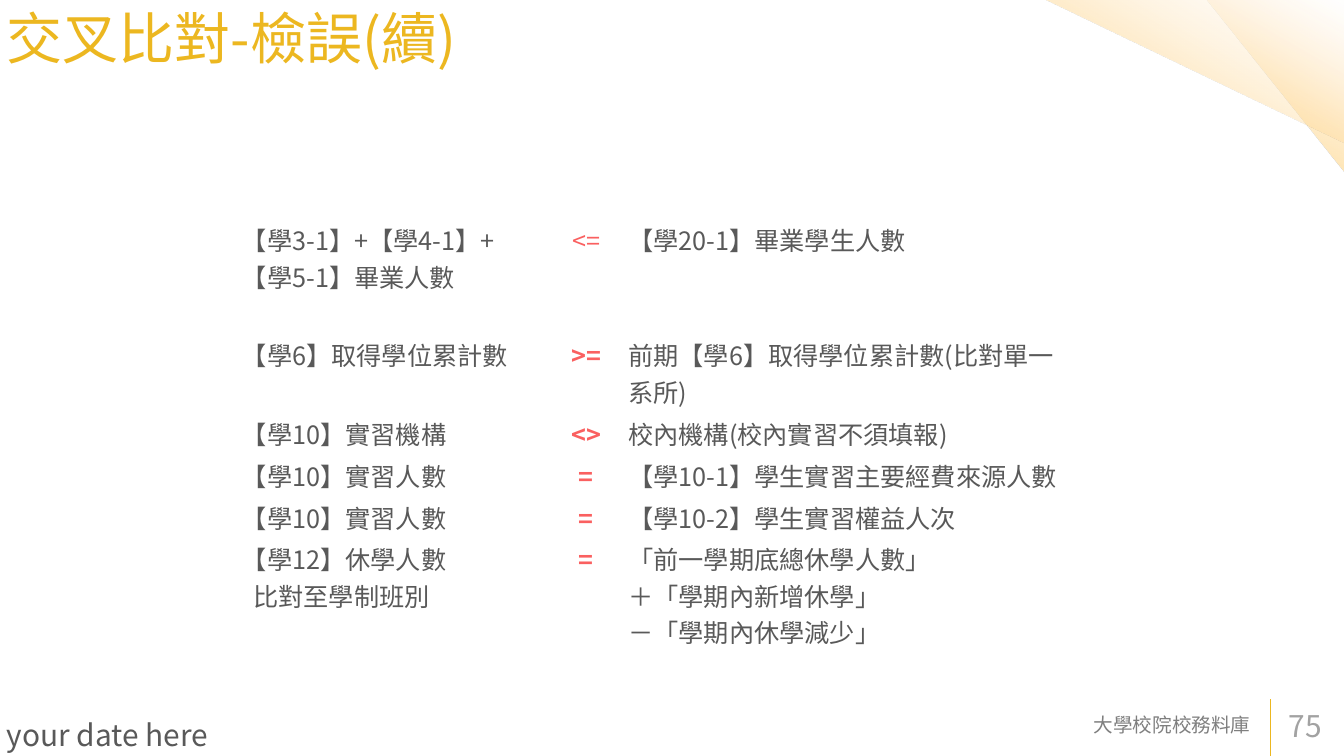
from lxml.etree import SubElement
from pptx import Presentation
from pptx.dml.color import RGBColor
from pptx.enum.shapes import MSO_CONNECTOR, MSO_SHAPE
from pptx.enum.text import MSO_ANCHOR as Anchor, MSO_AUTO_SIZE as AutoSize, PP_ALIGN as Align
from pptx.oxml.ns import qn
from pptx.util import Inches, Pt

FONT = "Noto Sans CJK TC"
GOLD = RGBColor(0xEC, 0xB7, 0x20)
INK = RGBColor(0x59, 0x59, 0x59)
RED = RGBColor(0xFA, 0x60, 0x60)
FOOTER_GREY = RGBColor(0x7F, 0x7F, 0x7F)
NUMBER_GREY = RGBColor(0xA2, 0xA2, 0xA2)

# Gradient stops: position %, colour, opacity %
GLOW = [(0, "FFD984", 100), (50, "FFD995", 43), (100, "FFF0DA", 0)]
GLOW_ANGLE = 120

# Left side, operator, right side, operator in bold, row height
CHECKS = [
    ("【學3-1】+【學4-1】+【學5-1】畢業人數", "<=", "【學20-1】畢業學生人數", False, 0.98),
    ("【學6】取得學位累計數", ">=", "前期【學6】取得學位累計數(比對單一系所)", True, 0.98),
    ("【學10】實習機構", "<>", "校內機構(校內實習不須填報)", True, 0.52),
    ("【學10】實習人數", "=", "【學10-1】學生實習主要經費來源人數", True, 0.52),
    ("【學10】實習人數", "=", "【學10-2】學生實習權益人次", True, 0.52),
    ("【學12】休學人數\n比對至學制班別", "=",
     "「前一學期底總休學人數」\n＋「學期內新增休學」\n－「學期內休學減少」", True, 1.43),
]
COLUMNS = [4.64, 1.11, 6.79]


def write(frame, text, size=27, color=INK, bold=False, align=Align.LEFT):
    """Fill a text frame, one paragraph per line of text."""
    for i, line in enumerate(text.split("\n")):
        paragraph = frame.paragraphs[0] if i == 0 else frame.add_paragraph()
        paragraph.alignment = align
        run = paragraph.add_run()
        run.text = line
        font = run.font
        font.size, font.bold, font.name = Pt(size), bold, FONT
        font.color.rgb = color
        SubElement(font._element, qn("a:ea")).set("typeface", FONT)


def set_insets(target, x, y):
    target.margin_left = target.margin_right = Inches(x)
    target.margin_top = target.margin_bottom = Inches(y)


class SlideBuilder:
    def __init__(self, slide):
        self.slide = slide
        self.shapes = slide.shapes

    def title(self, text, left, top, width, height):
        title = self.shapes.title
        title.left, title.top = Inches(left), Inches(top)
        title.width, title.height = Inches(width), Inches(height)
        frame = title.text_frame
        frame.word_wrap, frame.auto_size = True, AutoSize.NONE
        frame.vertical_anchor = Anchor.TOP
        set_insets(frame, 0.1, 0.05)
        write(frame, text, size=60, color=GOLD)

    def label(self, text, left, top, width, height, insets=(0.18, 0.09),
              anchor=Anchor.MIDDLE, **style):
        box = self.shapes.add_textbox(*map(Inches, (left, top, width, height)))
        frame = box.text_frame
        frame.word_wrap = True
        frame.vertical_anchor = anchor
        set_insets(frame, *insets)
        write(frame, text, **style)

    def corner(self, left, top, width, height):
        triangle = self.shapes.add_shape(
            MSO_SHAPE.RIGHT_TRIANGLE, *map(Inches, (left, top, width, height)))
        triangle.rotation = 180
        triangle.shadow.inherit = False
        triangle.line.fill.background()
        triangle.fill.gradient()
        gradient = triangle._element.spPr.find(qn("a:gradFill"))
        stops = gradient.find(qn("a:gsLst"))
        for stop in list(stops):
            stops.remove(stop)
        for position, color, opacity in GLOW:
            stop = SubElement(stops, qn("a:gs"), pos=str(position * 1000))
            value = SubElement(stop, qn("a:srgbClr"), val=color)
            SubElement(value, qn("a:alpha"), val=str(opacity * 1000))
        gradient.find(qn("a:lin")).set("ang", str(GLOW_ANGLE * 60000))

    def rule(self, x1, y1, x2, y2):
        line = self.shapes.add_connector(
            MSO_CONNECTOR.STRAIGHT, *map(Inches, (x1, y1, x2, y2)))
        line.line.color.rgb = GOLD
        line.line.width = Pt(1)
        SubElement(line._element.spPr, qn("a:effectLst"))

    def check_table(self, left, top):
        heights = [check[-1] for check in CHECKS]
        table = self.shapes.add_table(
            len(CHECKS), len(COLUMNS), Inches(left), Inches(top),
            Inches(sum(COLUMNS)), Inches(sum(heights))).table
        table.first_row = table.horz_banding = False
        for column, width in zip(table.columns, COLUMNS):
            column.width = Inches(width)
        for row, (source, operator, target, bold, height) in zip(table.rows, CHECKS):
            row.height = Inches(height)
            for cell in row.cells:
                cell.fill.background()
                set_insets(cell, 0.07, 0.04)
            source_cell, operator_cell, target_cell = row.cells
            write(source_cell.text_frame, source)
            write(operator_cell.text_frame, operator, color=RED, bold=bold, align=Align.CENTER)
            write(target_cell.text_frame, target)
            # A second line on the left is a remark, set in a little
            for remark in source_cell.text_frame.paragraphs[1:]:
                remark._p.get_or_add_pPr().set("marL", str(Inches(0.17)))


def main():
    deck = Presentation()
    deck.slide_width, deck.slide_height = Inches(20), Inches(11.25)
    builder = SlideBuilder(deck.slides.add_slide(deck.slide_layouts[5]))

    # Decoration
    builder.rule(18.91, 11.25, 18.91, 10.4)
    builder.corner(17.96, 0, 2.04, 2.57)
    builder.corner(15.54, 0, 4.48, 2.13)

    # Title and checks
    builder.title("交叉比對-檢誤(續)", 0, 0, 11.21, 3.28)
    builder.check_table(3.53, 3.26)

    # Footer
    builder.label("大學校院校務料庫", 10.29, 10.49, 8.5, 0.6,
                  size=21, color=FOOTER_GREY, align=Align.RIGHT)
    builder.label("75", 19, 10.49, 0.99, 0.6, size=32, color=NUMBER_GREY)
    builder.label("your date here", 0, 10.61, 4.5, 0.46,
                  insets=(0.1, 0.05), anchor=Anchor.TOP, size=32)

    deck.save("out.pptx")


if __name__ == "__main__":
    main()
